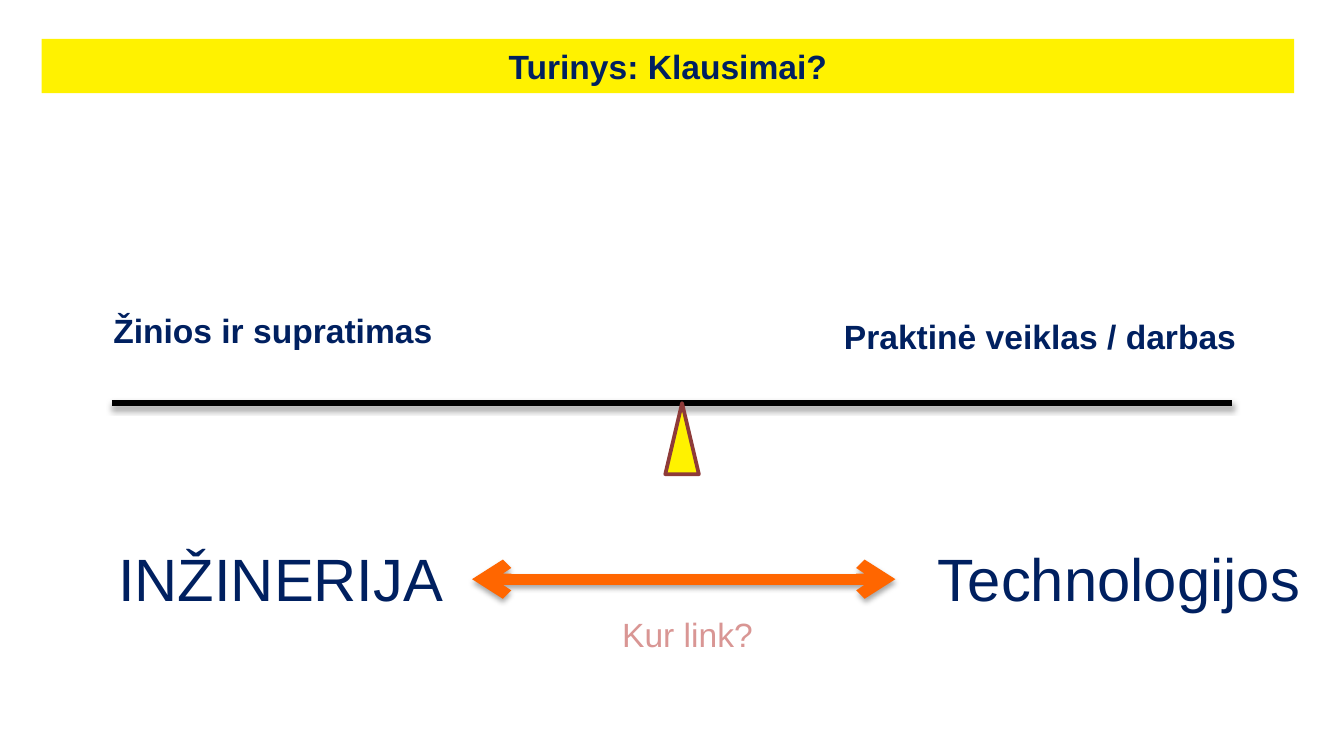
from lxml.etree import SubElement
from pptx import Presentation
from pptx.dml.color import RGBColor
from pptx.enum.shapes import MSO_CONNECTOR, MSO_SHAPE
from pptx.enum.text import MSO_ANCHOR, PP_ALIGN
from pptx.oxml.ns import qn
from pptx.util import Pt

NAVY = "002060"
YELLOW = "FFF200"


def paint(target, color):
    if hasattr(target, "solid"):
        target.solid()
        target.fore_color.rgb = RGBColor.from_string(color)
    else:
        target.rgb = RGBColor.from_string(color)


def write(frame, text, size=18, color=NAVY, bold=False, align=PP_ALIGN.LEFT):
    line = frame.paragraphs[0]
    line.alignment = align
    run = line.add_run()
    run.text = text
    run.font.name = "Arial"
    run.font.size = Pt(size)
    run.font.bold = bold
    paint(run.font.color, color)


def label(slide, box, text, wrap=False, **style):
    frame = slide.shapes.add_textbox(*map(Pt, box)).text_frame
    frame.word_wrap = wrap
    write(frame, text, **style)


def stroke(slide, left, right, top, color, width, arrows=False):
    line = slide.shapes.add_connector(
        MSO_CONNECTOR.STRAIGHT, Pt(left), Pt(top), Pt(right), Pt(top))
    paint(line.line.fill, color)
    line.line.width = Pt(width)
    props = line._element.spPr
    if arrows:
        for end in ("a:headEnd", "a:tailEnd"):
            SubElement(props.find(qn("a:ln")), qn(end), type="arrow")
    effects = SubElement(props, qn("a:effectLst"))
    shadow = SubElement(
        effects, qn("a:outerShdw"), blurRad=str(Pt(3.1)), dist=str(Pt(1.8)),
        dir="5400000", rotWithShape="0")
    tint = SubElement(shadow, qn("a:srgbClr"), val="000000")
    SubElement(tint, qn("a:alpha"), val="35000")


def header(slide, box):
    title = slide.shapes.title
    title.left, title.top, title.width, title.height = map(Pt, box)
    paint(title.fill, YELLOW)
    title.text_frame.vertical_anchor = MSO_ANCHOR.MIDDLE
    write(title.text_frame, "Turinys: Klausimai?", bold=True,
          align=PP_ALIGN.CENTER)


def balance(slide, box):
    left, top, width, height = box
    beam = top + 53.3
    stroke(slide, left, left + width, beam, "000000", 3)
    label(slide, (left - 17.5, top, 207.4, 29), "Žinios ir supratimas",
          wrap=True, bold=True, align=PP_ALIGN.CENTER)
    label(slide, (left + width - 215, top + 2.9, 226.8, 29),
          "Praktinė veiklas / darbas", bold=True)
    wedge = slide.shapes.add_shape(
        MSO_SHAPE.ISOSCELES_TRIANGLE, Pt(left + width / 2 - 3.6), Pt(beam),
        Pt(18), Pt(top + height - beam))
    wedge.shadow.inherit = False
    paint(wedge.fill, YELLOW)
    paint(wedge.line.fill, "8E3B39")
    wedge.line.width = Pt(2)


def bridge(slide, box):
    left, top, width, height = box
    label(slide, (left, top, 190.8, 46), "INŽINERIJA", size=32)
    label(slide, (left + width - 210.2, top, 210.2, 46), "Technologijos",
          size=32)
    stroke(slide, left + 196.7, left + 423.5, top + 23.7, "FF6600", 6,
           arrows=True)
    label(slide, (left + 270, top + height - 29, 85, 29), "Kur link?",
          color="D99694")


def main():
    deck = Presentation()
    deck.slide_width, deck.slide_height = Pt(720), Pt(405)
    slide = deck.slides.add_slide(deck.slide_layouts[5])
    header(slide, (22.3, 20.9, 671, 29))
    balance(slide, (60, 162.7, 600, 91.4))
    bridge(slide, (56.2, 286.6, 649.4, 67.8))
    deck.save("out.pptx")


if __name__ == "__main__":
    main()
